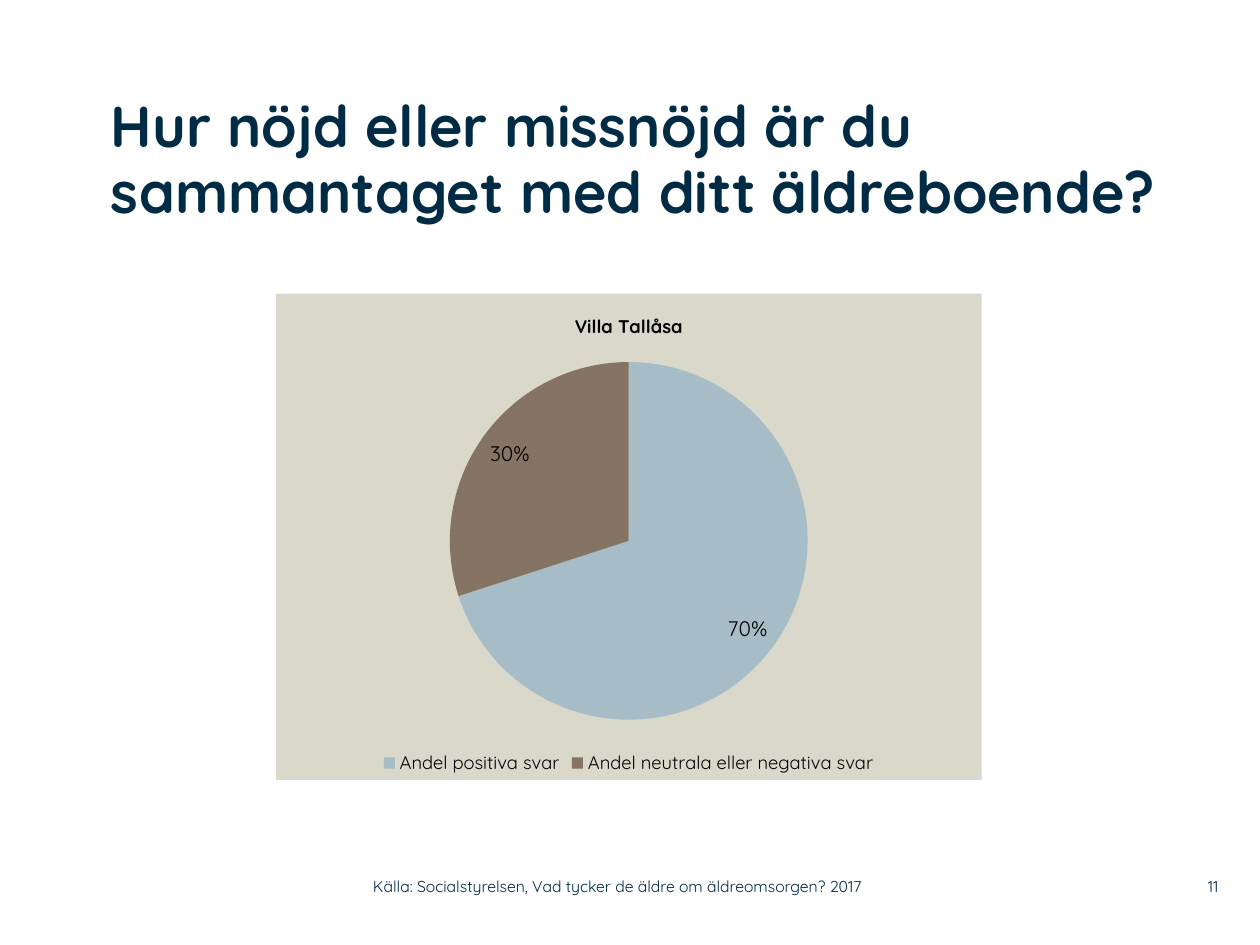
from dataclasses import dataclass

from lxml import etree
from pptx import Presentation
from pptx.chart.data import CategoryChartData
from pptx.dml.color import RGBColor
from pptx.enum.chart import XL_CHART_TYPE as ChartType
from pptx.enum.chart import XL_LABEL_POSITION as LabelPosition
from pptx.enum.chart import XL_LEGEND_POSITION as LegendPosition
from pptx.enum.text import MSO_ANCHOR as Anchor
from pptx.enum.text import PP_ALIGN as Align
from pptx.oxml.ns import qn
from pptx.util import Inches, Pt


@dataclass(frozen=True)
class Theme:
    font: str = "Quicksand"
    navy: RGBColor = RGBColor.from_string("002B45")
    black: RGBColor = RGBColor.from_string("000000")
    panel: RGBColor = RGBColor.from_string("DAD7CB")
    slices: tuple = (RGBColor.from_string("A6BCC6"), RGBColor.from_string("857363"))
    title: float = 33
    footer: float = 9
    chart: float = 18
    chart_caption: float = 10.5
    chart_label: float = 12


class SlideBuilder:
    def __init__(self, slide, theme):
        self.slide = slide
        self.theme = theme

    def style(self, font, size, color, bold=False):
        font.name = self.theme.font
        font.size = Pt(size)
        font.bold = bold
        font.color.rgb = color

    def text(self, content, box, size, bold=False, anchor=Anchor.MIDDLE,
             align=Align.LEFT, line_spacing=1.0):
        frame = self.slide.shapes.add_textbox(*map(Inches, box)).text_frame
        frame.word_wrap = True
        frame.vertical_anchor = anchor
        frame.margin_left = frame.margin_right = 0
        frame.margin_top = frame.margin_bottom = 0
        paragraph = frame.paragraphs[0]
        paragraph.text = content
        paragraph.alignment = align
        paragraph.line_spacing = line_spacing
        self.style(paragraph.font, size, self.theme.navy, bold)

    def pie(self, title, shares, box):
        theme = self.theme
        data = CategoryChartData(number_format="0")
        data.categories = list(shares)
        data.add_series("Series 1", list(shares.values()))
        chart = self.slide.shapes.add_chart(
            ChartType.PIE, *map(Inches, box), data).chart
        self.style(chart.font, theme.chart, theme.black)
        self.fill_chart_area(chart)

        chart.has_title = True
        caption = chart.chart_title.text_frame.paragraphs[0]
        caption.text = title
        self.style(caption.font, theme.chart_caption, theme.black, bold=True)
        chart.chart_title.include_in_layout = False

        chart.has_legend = True
        chart.legend.position = LegendPosition.BOTTOM
        chart.legend.include_in_layout = False
        self.style(chart.legend.font, theme.chart_caption, theme.black)

        plot = chart.plots[0]
        plot.vary_by_categories = True
        for index, color in enumerate(theme.slices):
            fill = plot.series[0].points[index].format.fill
            fill.solid()
            fill.fore_color.rgb = color

        plot.has_data_labels = True
        labels = plot.data_labels
        labels.show_percentage = True
        labels.show_value = False
        labels.number_format = "0%"
        labels.number_format_is_linked = False
        labels.position = LabelPosition.INSIDE_END
        self.style(labels.font, theme.chart_label, theme.black)

    def fill_chart_area(self, chart):
        """Fill the whole chart background and remove its border."""
        area = etree.Element(qn("c:spPr"))
        fill = etree.SubElement(area, qn("a:solidFill"))
        etree.SubElement(fill, qn("a:srgbClr"), val=str(self.theme.panel))
        line = etree.SubElement(area, qn("a:ln"))
        etree.SubElement(line, qn("a:noFill"))
        chart.font  # the text properties must follow the area properties
        chart.element.find(qn("c:txPr")).addprevious(area)


def main():
    presentation = Presentation()
    presentation.slide_width = Inches(10)
    presentation.slide_height = Inches(7.5)
    slide = presentation.slides.add_slide(presentation.slide_layouts[6])
    theme = Theme()
    builder = SlideBuilder(slide, theme)

    builder.text("Hur nöjd eller missnöjd är du sammantaget med ditt äldreboende?",
                 (0.88, 0.75, 8.83, 1.42), theme.title, bold=True,
                 anchor=Anchor.TOP, line_spacing=0.95)
    builder.pie("Villa Tallåsa",
                {"Andel positiva svar": 70, "Andel neutrala eller negativa svar": 30},
                (2.19, 2.33, 5.6, 3.86))
    builder.text("Källa: Socialstyrelsen, Vad tycker de äldre om äldreomsorgen? 2017",
                 (2.96, 6.89, 4.43, 0.29), theme.footer)
    builder.text("11", (9.2, 6.89, 0.47, 0.29), theme.footer, align=Align.RIGHT)

    presentation.save("out.pptx")


if __name__ == "__main__":
    main()
